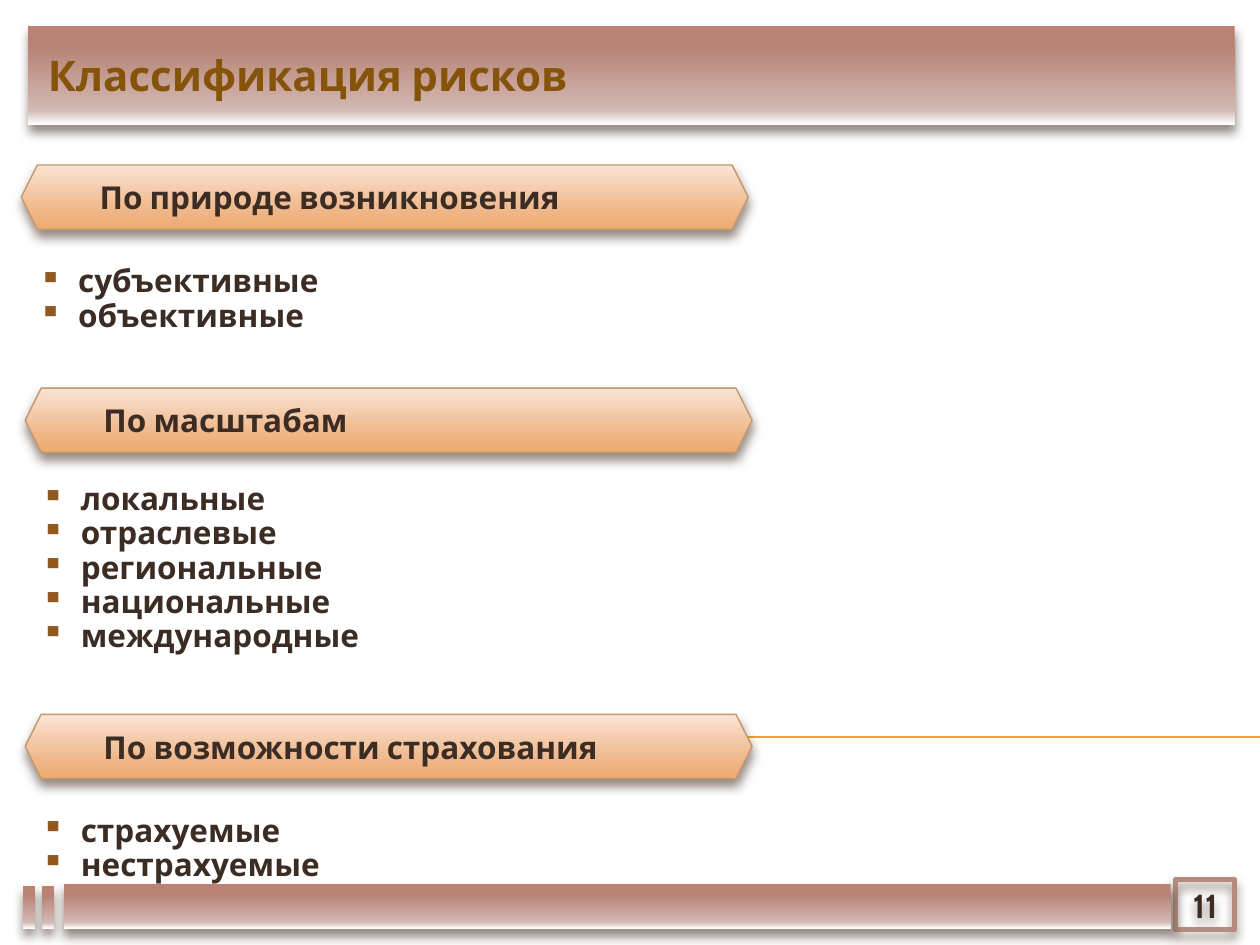
"""Build the slide that classifies risks by nature, scale and insurability."""
from lxml import etree
from pptx import Presentation
from pptx.dml.color import RGBColor
from pptx.enum.shapes import MSO_CONNECTOR, MSO_SHAPE
from pptx.enum.text import MSO_ANCHOR, MSO_AUTO_SIZE, PP_ALIGN
from pptx.oxml.ns import qn
from pptx.util import Pt

LEFT, CENTER = PP_ALIGN.LEFT, PP_ALIGN.CENTER
TOP, MIDDLE = MSO_ANCHOR.TOP, MSO_ANCHOR.MIDDLE
RECT, HEXAGON = MSO_SHAPE.RECTANGLE, MSO_SHAPE.HEXAGON
STRAIGHT = MSO_CONNECTOR.STRAIGHT
NO_FIT = MSO_AUTO_SIZE.NONE
ROSE = [(0, "B98274"), (20, "B78274"), (85, "D3B9B3"), (100, "FFFFFF")]
PEACH = [(0, "FAE4D5"), (72, "EFB688"), (100, "EFAA6F")]
color = RGBColor.from_string


def write(shape, text, size=18, ink="3B2C24", align=LEFT, anchor=TOP, bullet=False):
    frame = shape.text_frame
    frame.text = text
    frame.word_wrap = True
    frame.auto_size = NO_FIT
    frame.vertical_anchor = anchor
    for para in frame.paragraphs:
        para.alignment = align
        font = para.runs[0].font
        font.name, font.size, font.bold = "Cabin", Pt(size), True
        font.color.rgb = color(ink)
        if bullet:
            para.line_spacing = 0.9
            props = para._p.get_or_add_pPr()
            props.set("marL", str(Pt(22.5)))
            props.set("indent", str(-Pt(22.5)))
            tint = etree.SubElement(props, qn("a:buClr"))
            etree.SubElement(tint, qn("a:srgbClr"), val="91581F")
            etree.SubElement(props, qn("a:buChar"), char="▪")


def panel(kind, x, y, w, h, stops=None, edge=None, width=0):
    shape = slide.shapes.add_shape(kind, Pt(x), Pt(y), Pt(w), Pt(h))
    if stops:
        shape.fill.gradient()
        shape.fill.gradient_angle = 270
        ramp = shape._element.spPr.find(".//" + qn("a:gsLst"))
        ramp.clear()
        for pos, tone in stops:
            stop = etree.SubElement(ramp, qn("a:gs"), pos=str(pos * 1000))
            etree.SubElement(stop, qn("a:srgbClr"), val=tone)
    else:
        shape.fill.background()
    if edge:
        shape.line.color.rgb = color(edge)
        shape.line.width = Pt(width)
    else:
        shape.line.fill.background()
    shape.shadow.inherit = False
    effects = shape._element.spPr.find(qn("a:effectLst"))
    shade = etree.SubElement(effects, qn("a:outerShdw"), blurRad=str(Pt(6)),
                             dist=str(Pt(4)), dir="5400000", rotWithShape="0")
    tone = etree.SubElement(shade, qn("a:srgbClr"), val="4E3B30")
    etree.SubElement(tone, qn("a:alpha"), val="60000")
    return shape


deck = Presentation()
deck.slide_width, deck.slide_height = Pt(720), Pt(540)
slide = deck.slides.add_slide(deck.slide_layouts[5])

rule = slide.shapes.add_connector(STRAIGHT, Pt(40.3), Pt(421.2), Pt(720), Pt(421.2))
rule.line.color.rgb = color("F0A22E")
rule.line.width = Pt(0.75)
etree.SubElement(rule._element.spPr, qn("a:effectLst"))

number = panel(RECT, 671.8, 502.6, 33.8, 28.8, edge="B58B80", width=3)
write(number, "11", size=19, align=CENTER, anchor=MIDDLE)

bars = [(15.8, 15.1, 689.8, 56.2), (23.8, 506.2, 7.2, 24.5),
        (36.7, 505.4, 632.2, 25.2), (13, 506.2, 7.2, 24.5)]
for bar in bars:
    panel(RECT, *bar, stops=ROSE)

title = slide.shapes.title
title.left, title.top, title.width, title.height = Pt(20.2), Pt(24.5), Pt(671), Pt(36)
write(title, "Классификация рисков", size=24, ink="85540A")
slide.shapes._spTree.append(title._element)

groups = [
    ("По природе возникновения", 12.2, 94.3, 15.1, 148.3, 68.4,
     ["субъективные", "объективные"]),
    ("По масштабам", 14.4, 221.8, 16.6, 272.9, 127.4,
     ["локальные", "отраслевые", "региональные", "национальные", "международные"]),
    ("По возможности страхования", 14.4, 408.2, 16.6, 462.2, 68.4,
     ["страхуемые", "нестрахуемые"]),
]
for head, x, y, left, top, height, items in groups:
    body = slide.shapes.add_textbox(Pt(left), Pt(top), Pt(689.8), Pt(height))
    write(body, "\n".join(items), bullet=True)
    label = panel(HEXAGON, x, y, 415.4, 36.7, stops=PEACH, edge="C3986D", width=0.79)
    write(label, head, anchor=MIDDLE)

deck.save("out.pptx")
